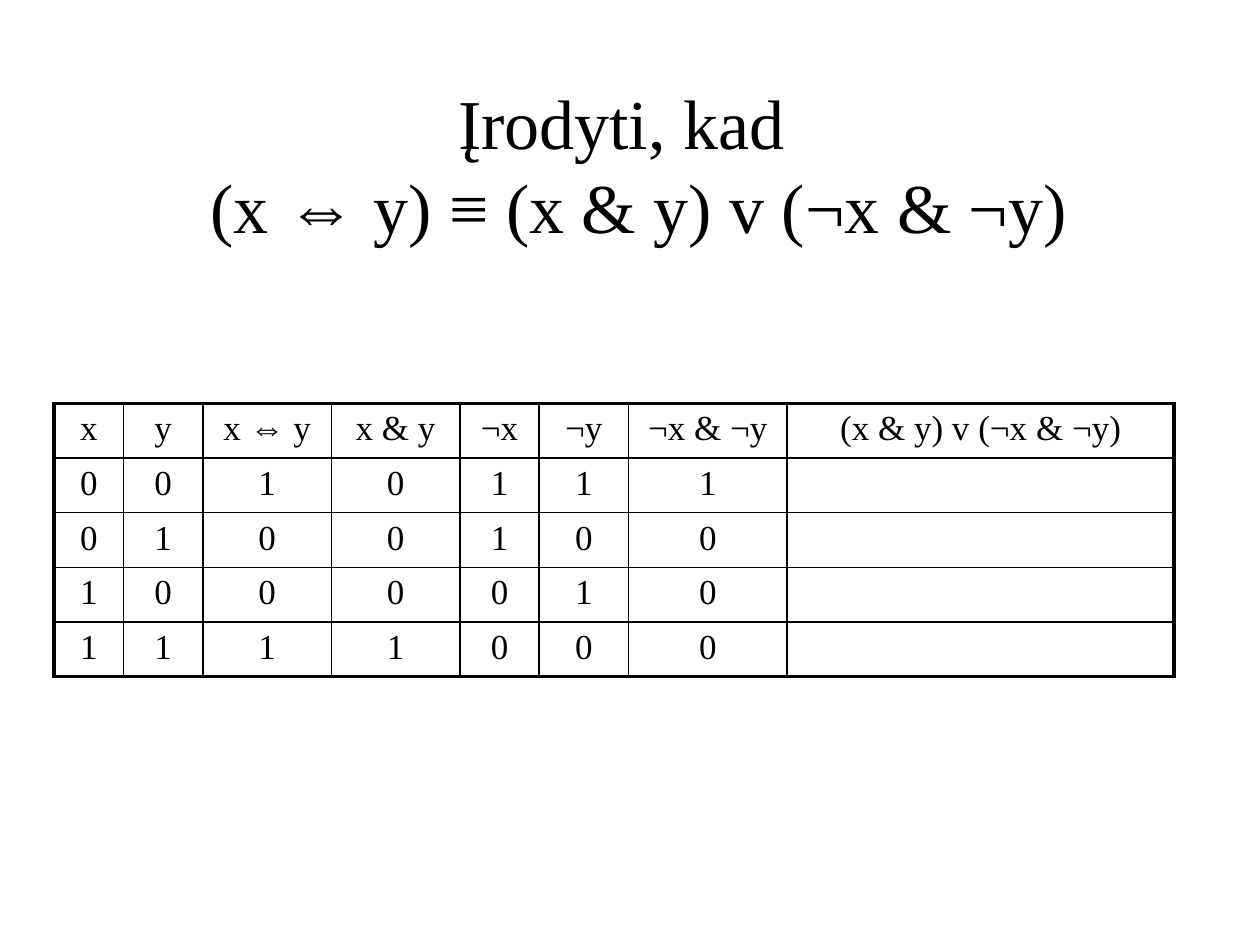
from dataclasses import dataclass

from lxml.etree import SubElement as Sub
from pptx import Presentation as Deck
from pptx.dml.color import RGBColor as Color
from pptx.enum.text import MSO_ANCHOR as Anchor, PP_ALIGN as Align
from pptx.oxml.ns import qn
from pptx.util import Cm, Pt


@dataclass(frozen=True)
class Theme:
    font: str = "Times New Roman"
    ink: str = "000000"
    title: float = 40
    body: float = 20
    thin: float = 1
    thick: float = 2.25


@dataclass(frozen=True)
class Column:
    head: str
    width: float
    marks: str = ""


THEME = Theme()
TITLE = "Įrodyti, kad \n (x ⇔ y) ≡ (x & y) v (¬x & ¬y)"
TRUTH = (
    Column("x", 1.4, "0011"),
    Column("y", 1.6, "0101"),
    Column("x ⇔ y", 2.59, "1001"),
    Column("x & y", 2.59, "0001"),
    Column("¬x", 1.6, "1100"),
    Column("¬y", 1.8, "1010"),
    Column("¬x & ¬y", 3.2, "1000"),
    Column("(x & y) v (¬x & ¬y)", 7.8),
)
CASES = 4
ROW = 1.04


def write(frame, text: str, *, size: float, align=Align.CENTER) -> None:
    para = frame.paragraphs[0]
    para.alignment = align
    para.font.size = Pt(size)
    for spot, line in enumerate(text.split("\n")):
        if spot:
            para.add_line_break()
        if line:
            run = para.add_run()
            run.text = line
            run.font.name = THEME.font
            run.font.size = Pt(size)
            run.font.color.rgb = Color.from_string(THEME.ink)


def rule(cell, side: str, width: float) -> None:
    line = Sub(cell._tc.get_or_add_tcPr(), qn(f"a:ln{side}"), w=str(Pt(width)))
    Sub(Sub(line, qn("a:solidFill")), qn("a:srgbClr"), val=THEME.ink)


def draw_title(slide) -> None:
    box = slide.shapes.add_textbox(Cm(1.9), Cm(1.7), Cm(21.6), Cm(3.18))
    frame = box.text_frame
    frame.word_wrap = True
    frame.vertical_anchor = Anchor.MIDDLE
    write(frame, TITLE, size=THEME.title)


def draw_table(slide) -> None:
    count = CASES + 1
    width = sum(col.width for col in TRUTH)
    table = slide.shapes.add_table(
        count, len(TRUTH), Cm(1.09), Cm(8.13), Cm(width), Cm(ROW * count)
    ).table
    table.first_row = table.horz_banding = False
    for row in table.rows:
        row.height = Cm(ROW)
    for x, col in enumerate(TRUTH):
        table.columns[x].width = Cm(col.width)
        texts = [col.head, *(col.marks or [""] * CASES)]
        for y, text in enumerate(texts):
            cell = table.cell(y, x)
            edges = {
                "L": x == 0,
                "R": x == len(TRUTH) - 1,
                "T": y == 0,
                "B": y == CASES,
            }
            for side, outer in edges.items():
                rule(cell, side, THEME.thick if outer else THEME.thin)
            cell.fill.background()
            write(cell.text_frame, text, size=THEME.body)


def main() -> None:
    deck = Deck()
    deck.slide_width, deck.slide_height = Cm(25.4), Cm(19.05)
    slide = deck.slides.add_slide(deck.slide_layouts[6])
    draw_title(slide)
    draw_table(slide)
    deck.save("out.pptx")


if __name__ == "__main__":
    main()
